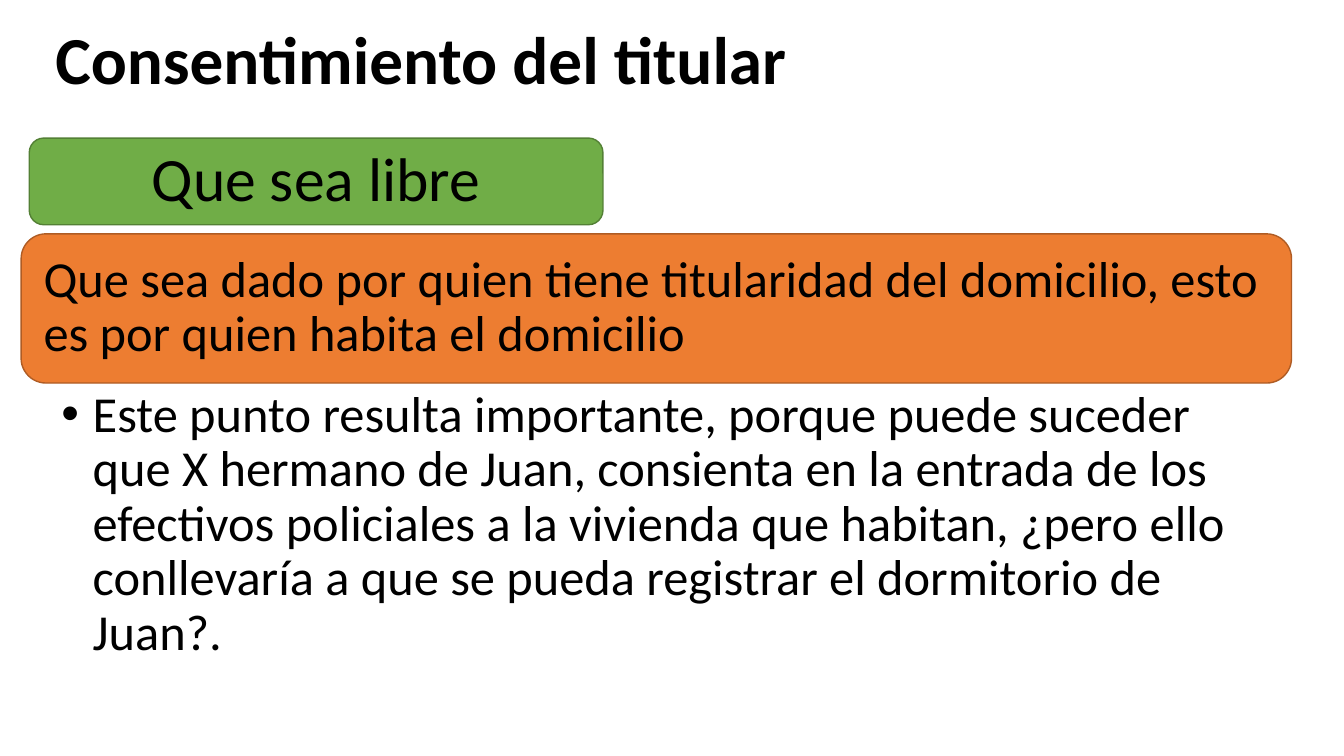
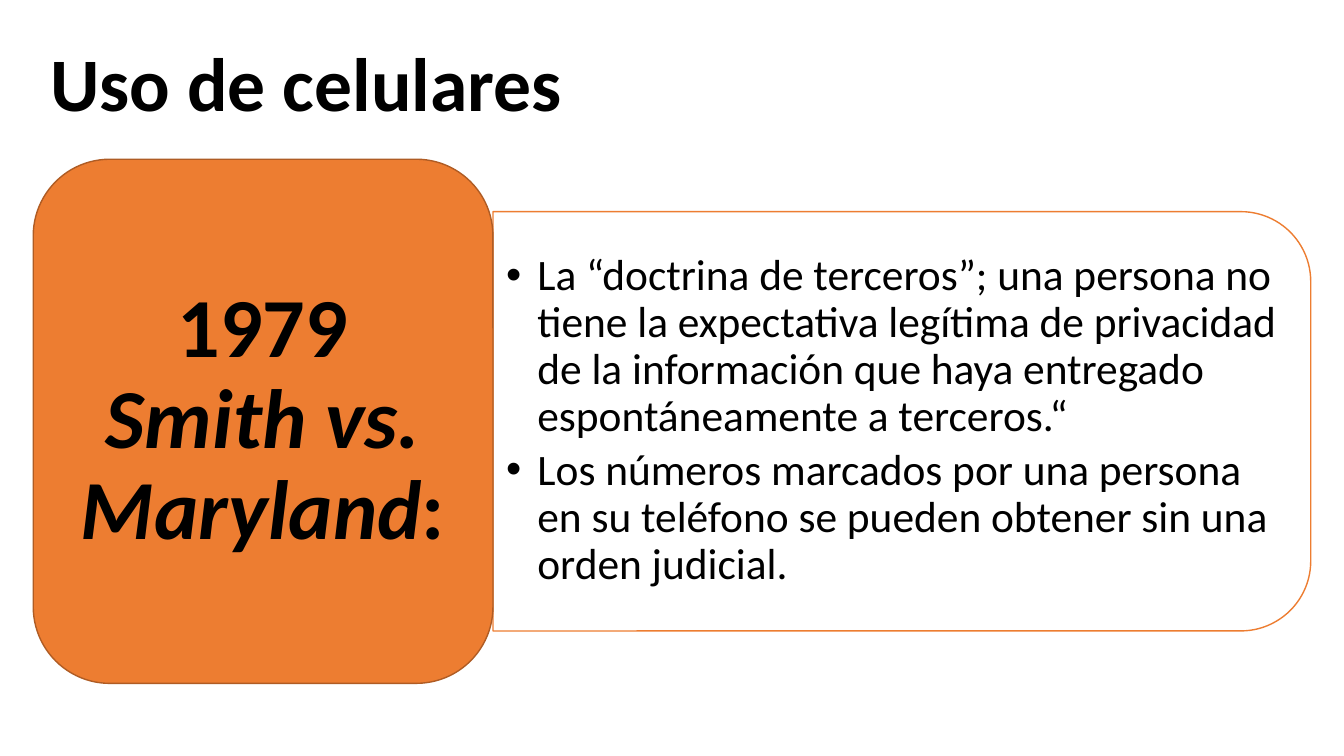
from dataclasses import dataclass

from lxml import etree
from pptx import Presentation
from pptx import util as u
from pptx.dml import color
from pptx.enum import shapes, text
from pptx.oxml import ns


@dataclass(frozen=True)
class Theme:
    font: str = "Calibri"
    ink: str = "000000"
    white: str = "FFFFFF"
    green: str = "70AD47"
    green_edge: str = "538035"
    orange: str = "ED7D31"
    orange_edge: str = "AF5C24"
    edge_width: float = 1
    line_spacing: float = 0.9
    bullet_indent: float = 0.31
    bullet_gap: float = 5
    title_small: int = 48
    title_large: int = 54
    case_size: int = 60
    label_size: int = 44
    body_size: int = 36
    detail_size: int = 31


THEME = Theme()
PLAIN_INSETS = (0.1, 0.05)
LEFT, CENTER = text.PP_ALIGN.LEFT, text.PP_ALIGN.CENTER
TOP, MIDDLE = text.MSO_ANCHOR.TOP, text.MSO_ANCHOR.MIDDLE


def rgb(value):
    return color.RGBColor.from_string(value)


def apply(target, values):
    for name, value in values.items():
        setattr(target, name, value)


def inches(values):
    return [u.Inches(value) for value in values]


def add_bullet(para):
    properties = para._p.get_or_add_pPr()
    indent = u.Inches(THEME.bullet_indent)
    properties.set("marL", str(indent))
    properties.set("indent", str(-indent))
    font = etree.SubElement(properties, ns.qn("a:buFont"))
    font.set("typeface", "Arial")
    etree.SubElement(properties, ns.qn("a:buChar")).set("char", "•")


def write(box, paragraphs, size, insets=PLAIN_INSETS, align=LEFT, anchor=TOP,
          bold=False, bullets=False):
    """Fill a box; each paragraph is a list of (words, italic), insets are
    (sides, top and bottom) or (left, top and bottom, right)."""
    frame = box.text_frame
    left, vertical, right = (*insets, insets[0])[:3]
    apply(frame, {
        "word_wrap": True,
        "vertical_anchor": anchor,
        "margin_left": u.Inches(left),
        "margin_right": u.Inches(right),
        "margin_top": u.Inches(vertical),
        "margin_bottom": u.Inches(vertical),
    })
    for index, spans in enumerate(paragraphs):
        para = frame.add_paragraph() if index else frame.paragraphs[0]
        apply(para, {"alignment": align, "line_spacing": THEME.line_spacing})
        if bullets:
            para.space_before = u.Pt(THEME.bullet_gap if index else 0)
            add_bullet(para)
        for words, italic in spans:
            span = para.add_run()
            span.text = words
            apply(span.font, {"name": THEME.font, "size": u.Pt(size),
                              "bold": bold, "italic": italic})
            span.font.color.rgb = rgb(THEME.ink)


def add_text(page, place, paragraphs, size, **style):
    box = page.shapes.add_textbox(*inches(place))
    write(box, paragraphs, size, **style)


def add_title(page, place, words, size):
    add_text(page, place, [[(words, False)]], size, bold=True)


def add_panel(page, kind, place, fill, edge):
    panel = page.shapes.add_shape(kind, *inches(place))
    panel.shadow.inherit = False
    panel.fill.solid()
    panel.fill.fore_color.rgb = rgb(fill)
    panel.line.color.rgb = rgb(edge)
    panel.line.width = u.Pt(THEME.edge_width)
    return panel


def add_card(page, place, fill, edge, spans, size, **style):
    kind = shapes.MSO_SHAPE.ROUNDED_RECTANGLE
    card = add_panel(page, kind, place, fill, edge)
    write(card, [spans], size, anchor=MIDDLE, **style)


def add_side_panel(page, place, fill, edge):
    """Panel rounded at its right corners: a top-rounded shape turned 90°."""
    left, top, width, height = place
    shift = (width - height) / 2
    panel = add_panel(page, shapes.MSO_SHAPE.ROUND_2_SAME_RECTANGLE,
                      (left + shift, top - shift, height, width), fill, edge)
    panel.rotation = 90


def build_consent(page):
    add_title(page, (0.45, 0.21, 11.5, 1.07), "Consentimiento del titular",
              THEME.title_small)
    add_card(page, (0.29, 1.37, 5.69, 0.86), THEME.green, THEME.green_edge,
             [("Que sea libre", False)], THEME.label_size,
             insets=(0.18, 0.18), align=CENTER)
    add_card(page, (0.21, 2.32, 12.6, 1.48), THEME.orange, THEME.orange_edge,
             [("Que sea dado por quien tiene titularidad del domicilio, esto "
               "es por quien habita el domicilio", False)],
             THEME.body_size, insets=(0.15, 0.15))
    add_text(page, (0.21, 3.81, 12.6, 2.9),
             [[("Este punto resulta importante, porque puede suceder que X "
                "hermano de Juan, consienta en la entrada de los efectivos "
                "policiales a la vivienda que habitan, ¿pero ello conllevaría "
                "a que se pueda registrar el dormitorio de Juan?.", False)]],
             THEME.body_size, insets=(0.4, 0.05, 0.28), bullets=True)


def build_phones(page):
    add_title(page, (0.4, 0.41, 11.5, 1.45), "Uso de celulares",
              THEME.title_large)
    add_side_panel(page, (4.89, 2.1, 8.11, 4.16), THEME.white, THEME.orange)
    add_text(page, (4.89, 2.3, 7.91, 3.75),
             [[("La “doctrina de terceros”; una persona no tiene la "
                "expectativa legítima de privacidad de la información que "
                "haya entregado espontáneamente a terceros.“", False)],
              [("Los números marcados por una persona en su teléfono se "
                "pueden obtener sin una orden judicial.", False)]],
             THEME.detail_size, insets=(0.13, 0.06), anchor=MIDDLE,
             bullets=True)
    add_card(page, (0.33, 1.58, 4.56, 5.2), THEME.orange, THEME.orange_edge,
             [("1979 ", False), ("Smith vs. Maryland", True), (":", False)],
             THEME.case_size, insets=(0.25, 0.12), align=CENTER, bold=True)


def main():
    deck = Presentation()
    apply(deck, {"slide_width": u.Inches(13.33),
                 "slide_height": u.Inches(7.5)})
    blank = deck.slide_layouts[6]
    for build in (build_consent, build_phones):
        build(deck.slides.add_slide(blank))
    deck.save("out.pptx")


if __name__ == "__main__":
    main()
